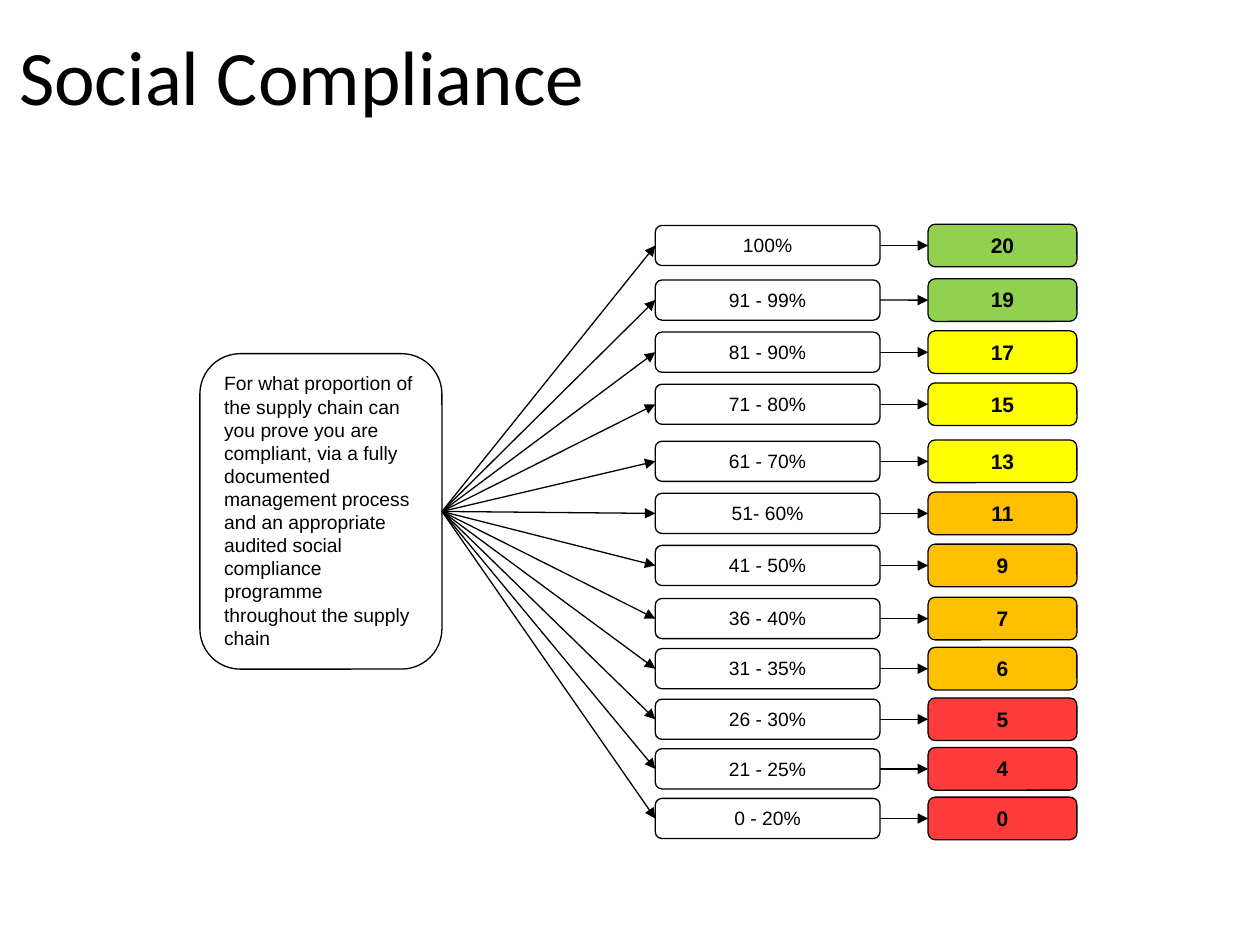
from dataclasses import dataclass

from lxml import etree
from pptx import Presentation
from pptx import util as u
from pptx.dml.color import RGBColor
from pptx.enum import shapes, text
from pptx.oxml.ns import qn


@dataclass(frozen=True)
class Theme:
    ink: str = "000000"
    paper: str = "FFFFFF"
    green: str = "92D050"
    yellow: str = "FFFF00"
    amber: str = "FFC000"
    red: str = "FF3B3B"
    title_font: str = "Calibri"
    body_font: str = "Arial"
    title_size: int = 44
    body_size: int = 11
    score_size: int = 12
    line_width: float = 0.75


class SlideBuilder:
    LEFT_SITE, RIGHT_SITE = 1, 3

    def __init__(self, slide, theme):
        self.slide = slide
        self.theme = theme

    def format_text(self, frame, font_name, size, align, bold=False):
        for paragraph in frame.paragraphs:
            paragraph.alignment = align
            for run in paragraph.runs:
                run.font.name = font_name
                run.font.size = u.Pt(size)
                run.font.bold = bold
                run.font.color.rgb = RGBColor.from_string(self.theme.ink)

    def title(self, wording, left, top, width, height):
        shape = self.slide.shapes.title
        shape.left, shape.top = u.Cm(left), u.Cm(top)
        shape.width, shape.height = u.Cm(width), u.Cm(height)
        frame = shape.text_frame
        frame.text = wording
        frame.vertical_anchor = text.MSO_ANCHOR.MIDDLE
        self.format_text(frame, self.theme.title_font, self.theme.title_size, text.PP_ALIGN.LEFT)

    def box(self, wording, left, middle, width, height, fill, size,
            align=text.PP_ALIGN.CENTER, bold=False):
        """Rounded box centred vertically on the given middle."""
        shape = self.slide.shapes.add_shape(
            shapes.MSO_SHAPE.FLOWCHART_ALTERNATE_PROCESS,
            u.Cm(left), u.Cm(middle - height / 2), u.Cm(width), u.Cm(height))
        shape.shadow.inherit = False
        shape.fill.solid()
        shape.fill.fore_color.rgb = RGBColor.from_string(fill)
        self.outline(shape.line)
        frame = shape.text_frame
        frame.text = wording
        frame.word_wrap = True
        frame.auto_size = text.MSO_AUTO_SIZE.SHAPE_TO_FIT_TEXT
        frame.vertical_anchor = text.MSO_ANCHOR.TOP
        self.format_text(frame, self.theme.body_font, size, align, bold)
        return shape

    def arrow(self, source, target):
        """Arrow from the right side of one box to the left side of another."""
        connector = self.slide.shapes.add_connector(shapes.MSO_CONNECTOR.STRAIGHT, 0, 0, 0, 0)
        connector.begin_connect(source, self.RIGHT_SITE)
        connector.end_connect(target, self.LEFT_SITE)
        self.outline(connector.line)
        properties = connector._element.spPr
        etree.SubElement(properties.find(qn("a:ln")), qn("a:tailEnd"), type="triangle")
        etree.SubElement(properties, qn("a:effectLst"))

    def outline(self, line):
        line.color.rgb = RGBColor.from_string(self.theme.ink)
        line.width = u.Pt(self.theme.line_width)


QUESTION = ("For what proportion of the supply chain can you prove you are compliant, "
            "via a fully documented management process and an appropriate audited social "
            "compliance programme throughout the supply chain")


def main():
    theme = Theme()
    presentation = Presentation()
    presentation.slide_width, presentation.slide_height = u.Cm(25.4), u.Cm(19.05)
    slide = presentation.slides.add_slide(presentation.slide_layouts[5])
    builder = SlideBuilder(slide, theme)

    builder.title("Social Compliance", 0.13, 0.2, 22.78, 2.6)

    # Question on the left
    question = builder.box(QUESTION, 4.03, 10.31, 4.88, 6.36, theme.paper,
                           theme.body_size, text.PP_ALIGN.LEFT)
    question.text_frame.paragraphs[0].space_before = u.Pt(2.2)

    # Answer band, score, colour and row middle in cm
    rows = [
        ("100%", "20", theme.green, 4.95),
        ("91 - 99%", "19", theme.green, 6.05),
        ("81 - 90%", "17", theme.yellow, 7.1),
        ("71 - 80%", "15", theme.yellow, 8.15),
        ("61 - 70%", "13", theme.yellow, 9.3),
        ("51- 60%", "11", theme.amber, 10.35),
        ("41 - 50%", "9", theme.amber, 11.4),
        ("36 - 40%", "7", theme.amber, 12.47),
        ("31 - 35%", "6", theme.amber, 13.48),
        ("26 - 30%", "5", theme.red, 14.5),
        ("21 - 25%", "4", theme.red, 15.5),
        ("0 - 20%", "0", theme.red, 16.5),
    ]
    for band, points, colour, middle in rows:
        answer = builder.box(band, 13.21, middle, 4.53, 0.81, theme.paper, theme.body_size)
        score = builder.box(points, 18.71, middle, 3, 0.86, colour, theme.score_size, bold=True)
        builder.arrow(question, answer)
        builder.arrow(answer, score)

    presentation.save("out.pptx")


if __name__ == "__main__":
    main()
